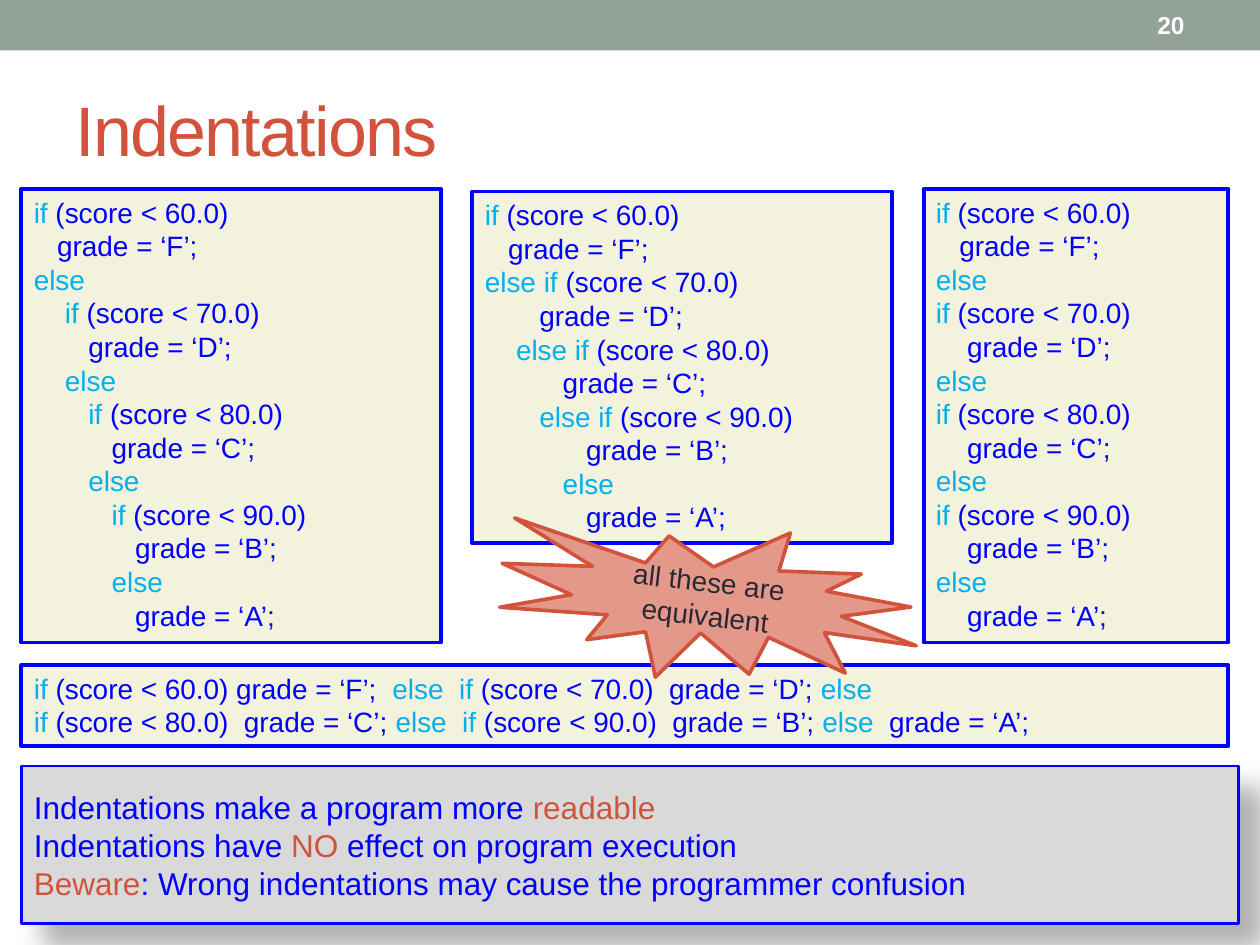
from lxml import etree
from pptx import Presentation
from pptx.dml.color import RGBColor
from pptx.enum.shapes import MSO_SHAPE
from pptx.enum.text import MSO_ANCHOR, MSO_AUTO_SIZE, PP_ALIGN
from pptx.oxml.ns import qn
from pptx.util import Inches, Pt

RECT, BURST = MSO_SHAPE.RECTANGLE, MSO_SHAPE.EXPLOSION1
TOP, MIDDLE = MSO_ANCHOR.TOP, MSO_ANCHOR.MIDDLE
GROW, FIXED = MSO_AUTO_SIZE.SHAPE_TO_FIT_TEXT, MSO_AUTO_SIZE.NONE
LEFT, CENTER, RIGHT = PP_ALIGN.LEFT, PP_ALIGN.CENTER, PP_ALIGN.RIGHT

WHITE = RGBColor(0xFF, 0xFF, 0xFF)
SAGE = RGBColor(0x93, 0xA2, 0x99)
CREAM = RGBColor(0xF3, 0xF2, 0xDC)
GRAY = RGBColor(0xD9, 0xD9, 0xD9)
BLUE = RGBColor(0x00, 0x00, 0xFF)
CYAN = RGBColor(0x00, 0xB0, 0xF0)
RED = RGBColor(0xD2, 0x53, 0x3C)
PINK = RGBColor(0xE4, 0x98, 0x8A)
INK = RGBColor(0x29, 0x29, 0x34)

# Asterisks enclose the words that take the accent colour.
NESTED = [
    "*if* (score < 60.0)", "grade = ‘F’;", "*else*",
    "*if* (score < 70.0)", "grade = ‘D’;", "*else*",
    "*if* (score < 80.0)", "grade = ‘C’;", "*else*",
    "*if* (score < 90.0)", "grade = ‘B’;", "*else*", "grade = ‘A’;",
]
CHAIN = [
    "*if* (score < 60.0)", "grade = ‘F’;",
    "*else if* (score < 70.0)", "grade = ‘D’;",
    "*else if* (score < 80.0)", "grade = ‘C’;",
    "*else if* (score < 90.0)", "grade = ‘B’;", "*else*", "grade = ‘A’;",
]
PACKED = [
    "*if* (score < 60.0) grade = ‘F’;  *else  if* (score < 70.0)  grade = ‘D’; *else*",
    "*if* (score < 80.0)  grade = ‘C’; *else  if* (score < 90.0)  grade = ‘B’; *else*  grade = ‘A’;",
]
NOTES = [
    "Indentations make a program more *readable*",
    "Indentations have *NO* effect on program execution",
    "*Beware*: Wrong indentations may cause the programmer confusion",
]
STEPS = [0, 3, 0, 4, 7, 4, 7, 10, 7, 10, 13, 10, 13]
STAIRS = [0, 3, 0, 7, 4, 10, 7, 13, 10, 13]
FLAT = [0, 3, 0, 0, 4, 0, 0, 4, 0, 0, 4, 0, 4]


class Deck:
    font = "Arial"
    space = Pt(4.45)  # width of one space at 16 points

    def __init__(self):
        self.prs = Presentation()
        self.prs.slide_width, self.prs.slide_height = Inches(10), Inches(7.5)
        self.slide = self.prs.slides.add_slide(self.prs.slide_layouts[5])

    def style(self, run, size, color, bold=False):
        font = run.font
        font.name, font.size, font.bold = self.font, Pt(size), bold
        font.color.rgb = color

    def title(self, text, box):
        shape = self.slide.shapes.title
        shape.left, shape.top, shape.width, shape.height = map(Inches, box)
        frame = shape.text_frame
        frame.text = text
        frame.auto_size, frame.vertical_anchor = FIXED, MIDDLE
        para = frame.paragraphs[0]
        para.alignment = LEFT
        self.style(para.runs[0], 40, RED)
        para.runs[0].font._element.set("spc", "-100")

    def shape(self, kind, box, fill, line=None, width=0):
        shape = self.slide.shapes.add_shape(kind, *map(Inches, box))
        shape.shadow.inherit = False
        shape.fill.solid()
        shape.fill.fore_color.rgb = fill
        if line is None:
            shape.line.fill.background()
        else:
            shape.line.color.rgb = line
            shape.line.width = Pt(width)
        return shape

    def label(self, frame, text, size, color, align, bold=False):
        frame.word_wrap, frame.vertical_anchor = True, MIDDLE
        frame.text = text
        para = frame.paragraphs[0]
        para.alignment = align
        self.style(para.runs[0], size, color, bold)

    def number(self, text, box):
        shape = self.slide.shapes.add_textbox(*map(Inches, box))
        self.label(shape.text_frame, text, 14, WHITE, RIGHT, True)

    def lines(self, frame, rows, size, accent, tabs=None):
        """Fill a frame with marked rows, each indented by its number of spaces."""
        for i, row in enumerate(rows):
            para = frame.add_paragraph() if i else frame.paragraphs[0]
            para.alignment = LEFT
            if tabs and tabs[i]:
                para._p.get_or_add_pPr().set("marL", str(tabs[i] * self.space))
            for j, part in enumerate(row.split("*")):
                if part:
                    run = para.add_run()
                    run.text = part
                    self.style(run, size, accent if j % 2 else BLUE)

    def code(self, rows, box, tabs=None):
        frame = self.shape(RECT, box, CREAM, BLUE, 2.25).text_frame
        frame.word_wrap, frame.vertical_anchor = True, TOP
        frame.auto_size = GROW
        self.lines(frame, rows, 16, CYAN, tabs)

    def notes(self, rows, box):
        shape = self.shape(RECT, box, GRAY, BLUE, 1.5)
        self.shade(shape)
        frame = shape.text_frame
        frame.word_wrap, frame.vertical_anchor = True, MIDDLE
        self.lines(frame, rows, 18, RED)

    def shade(self, shape):
        """Cast a soft shadow down and to the right."""
        effects = shape._element.spPr.find(qn("a:effectLst"))
        outer = etree.SubElement(
            effects, qn("a:outerShdw"), blurRad=str(Pt(15)), dist=str(Pt(18)),
            dir=str(45 * 60000), algn="tl", rotWithShape="0")
        color = etree.SubElement(outer, qn("a:srgbClr"), val="000000")
        etree.SubElement(color, qn("a:alpha"), val="30000")

    def burst(self, text, box, angle):
        shape = self.shape(BURST, box, PINK, RED, 2.08)
        shape.rotation = angle
        frame = shape.text_frame
        frame.margin_left = frame.margin_right = 0
        frame.margin_top = frame.margin_bottom = 0
        self.label(frame, text, 16, INK, CENTER)


def main():
    deck = Deck()
    deck.shape(RECT, (0, 0, 10, 0.4), SAGE)
    deck.number("20", (8.33, 0.02, 1.17, 0.36))
    deck.title("Indentations", (0.5, 0.48, 9, 1.08))
    deck.code(CHAIN, (3.75, 1.52, 3.33, 2.79), STAIRS)
    deck.code(NESTED, (0.17, 1.5, 3.33, 3.6), STEPS)
    deck.code(NESTED, (7.33, 1.5, 2.42, 3.6), FLAT)
    deck.notes(NOTES, (0.17, 6.08, 9.66, 1.25))
    deck.code(PACKED, (0.17, 5.28, 9.58, 0.64))
    deck.burst("all these are equivalent", (3.96, 4.16, 3.34, 1.26), 6.6)
    deck.prs.save("out.pptx")


if __name__ == "__main__":
    main()
